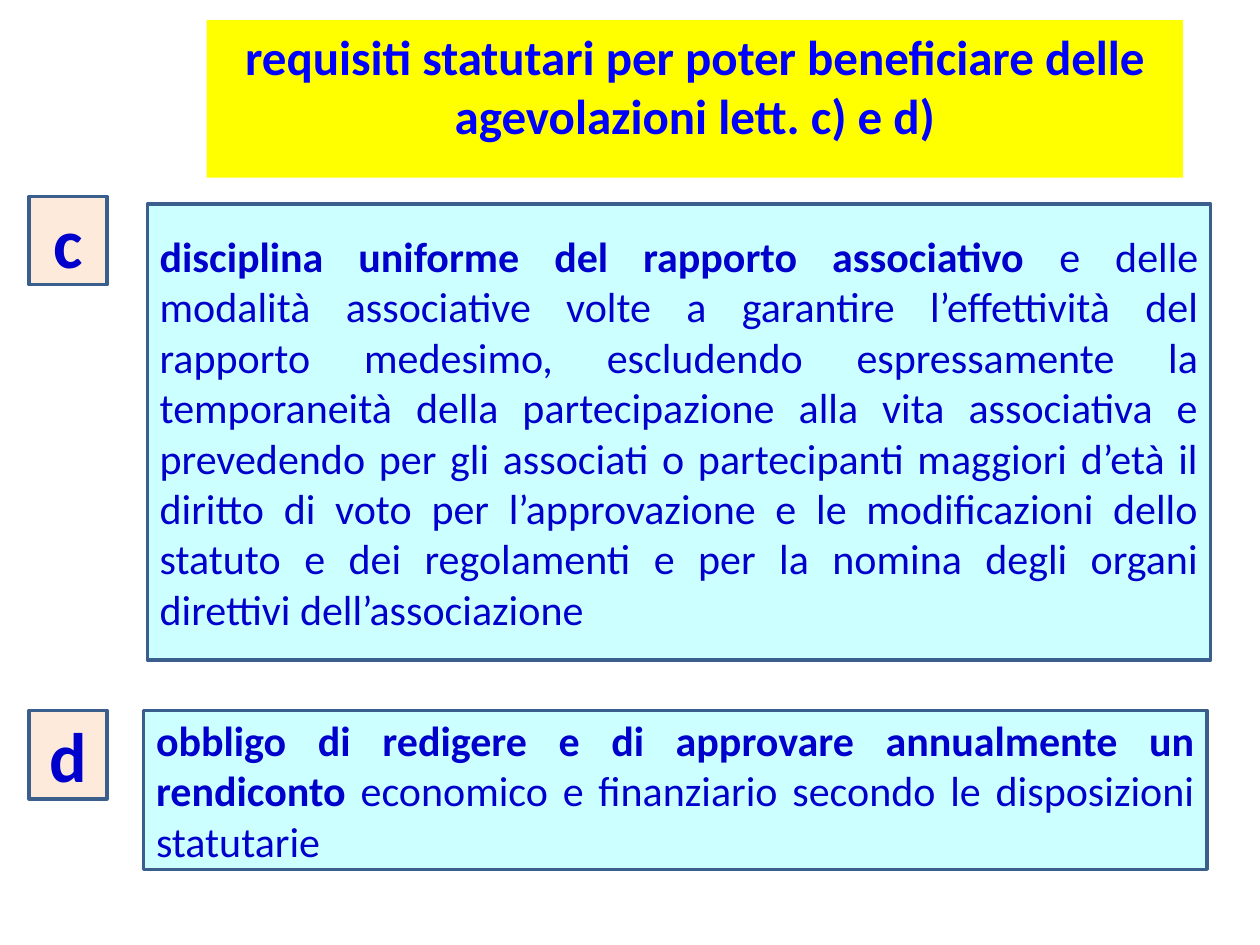
from dataclasses import dataclass

from pptx import Presentation
from pptx.dml.color import RGBColor
from pptx.enum.shapes import MSO_SHAPE as Shape
from pptx.enum.text import MSO_ANCHOR as Anchor, MSO_AUTO_SIZE as AutoSize, PP_ALIGN as Align
from pptx.util import Pt

COLORS = {
    "title_fill": "FFFF00",
    "title_text": "0000FF",
    "letter_fill": "FDEADA",
    "body_fill": "CCFFFF",
    "border": "3A5F8C",
    "text": "0000CC",
}
FONT = "Calibri"
LETTER_LEFT, LETTER_WIDTH, LETTER_HEIGHT = 16.6, 44.6, 50.4
BODY_WIDTH = 607.7


@dataclass
class Requirement:
    letter: str
    letter_top: float
    left: float
    top: float
    height: float
    key_words: str
    details: str


REQUIREMENTS = [
    Requirement(
        "c", 112.3, 84.2, 116.6, 260.6,
        "disciplina uniforme del rapporto associativo ",
        "e delle modalità associative volte a garantire l’effettività del rapporto "
        "medesimo, escludendo espressamente la temporaneità della partecipazione alla "
        "vita associativa e prevedendo per gli associati o partecipanti maggiori d’età "
        "il diritto di voto per l’approvazione e le modificazioni dello statuto e dei "
        "regolamenti e per la nomina degli organi direttivi dell’associazione",
    ),
    Requirement(
        "d", 406.1, 82.1, 406.1, 90.7,
        "obbligo di redigere e di approvare annualmente un rendiconto",
        " economico e finanziario secondo le disposizioni statutarie",
    ),
]


def rgb(name: str) -> RGBColor:
    return RGBColor.from_string(COLORS[name])


def write_text(box, *parts: str, size: float, color: str, align, anchor) -> None:
    """Write one paragraph; its first part is bold, the others are regular."""
    frame = box.text_frame
    frame.word_wrap = True
    frame.auto_size = AutoSize.NONE
    frame.vertical_anchor = anchor
    para = frame.paragraphs[0]
    para.alignment = align
    for index, part in enumerate(parts):
        span = para.add_run()
        span.text = part
        span.font.name = FONT
        span.font.size = Pt(size)
        span.font.bold = index == 0
        span.font.color.rgb = rgb(color)


def add_box(page, left: float, top: float, width: float, height: float, fill: str):
    box = page.shapes.add_shape(Shape.RECTANGLE, Pt(left), Pt(top), Pt(width), Pt(height))
    box.shadow.inherit = False
    box.fill.solid()
    box.fill.fore_color.rgb = rgb(fill)
    box.line.color.rgb = rgb("border")
    box.line.width = Pt(2)
    return box


def add_title(page, text: str) -> None:
    title = page.shapes.title
    title.left, title.top, title.width, title.height = Pt(118), Pt(11.5), Pt(558), Pt(90)
    title.fill.solid()
    title.fill.fore_color.rgb = rgb("title_fill")
    write_text(title, text, size=28, color="title_text", align=Align.CENTER, anchor=Anchor.TOP)


def add_requirement(page, item: Requirement) -> None:
    letter = add_box(page, LETTER_LEFT, item.letter_top, LETTER_WIDTH, LETTER_HEIGHT, "letter_fill")
    write_text(letter, item.letter, size=40, color="text", align=Align.CENTER, anchor=Anchor.MIDDLE)
    body = add_box(page, item.left, item.top, BODY_WIDTH, item.height, "body_fill")
    write_text(body, item.key_words, item.details, size=24, color="text",
               align=Align.JUSTIFY, anchor=Anchor.MIDDLE)


def main() -> None:
    deck = Presentation()
    deck.slide_width, deck.slide_height = Pt(720), Pt(540)
    page = deck.slides.add_slide(deck.slide_layouts[5])

    # Heading
    add_title(page, "requisiti statutari per poter beneficiare delle agevolazioni lett. c) e d)")

    # Lettered requirements
    for item in REQUIREMENTS:
        add_requirement(page, item)

    deck.save("out.pptx")


if __name__ == "__main__":
    main()
